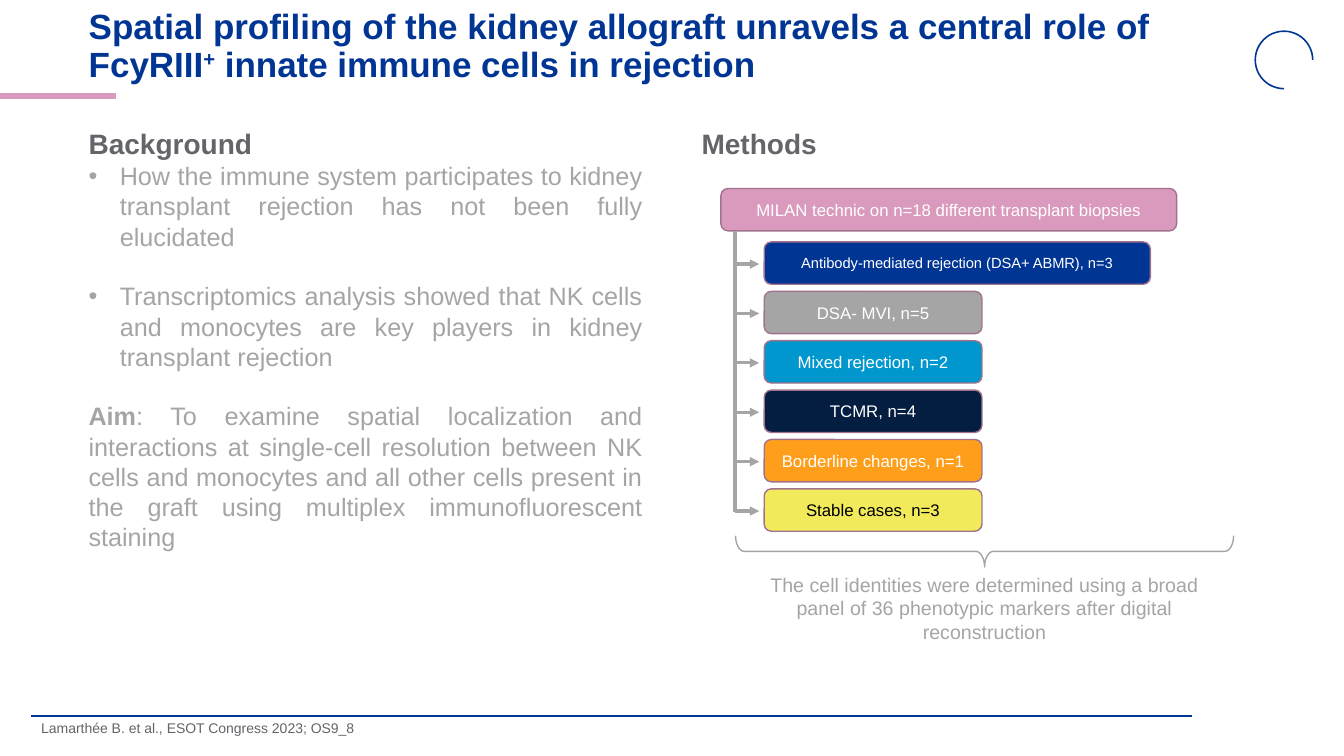
from lxml import etree
from pptx import Presentation
from pptx.dml.color import RGBColor
from pptx.enum.shapes import MSO_CONNECTOR, MSO_SHAPE
from pptx.enum.text import MSO_ANCHOR, PP_ALIGN
from pptx.oxml.ns import qn
from pptx.util import Pt

EMU_PER_PX = 9144  # 100 px to the inch
TITLE_ONLY = 5
STRAIGHT = MSO_CONNECTOR.STRAIGHT
BOX, BRACE, ARC = (MSO_SHAPE.FLOWCHART_ALTERNATE_PROCESS,
                   MSO_SHAPE.RIGHT_BRACE, MSO_SHAPE.ARC)
TOP, MIDDLE = MSO_ANCHOR.TOP, MSO_ANCHOR.MIDDLE
LEFT, CENTER, JUSTIFY = PP_ALIGN.LEFT, PP_ALIGN.CENTER, PP_ALIGN.JUSTIFY

WHITE = RGBColor(0xFF, 0xFF, 0xFF)
BLACK = RGBColor(0x00, 0x00, 0x00)
BLUE = RGBColor(0x00, 0x35, 0x94)
PINK = RGBColor(0xDA, 0x9A, 0xBD)
MAUVE = RGBColor(0xA1, 0x72, 0x8C)
DARK_GREY = RGBColor(0x63, 0x65, 0x69)
GREY = RGBColor(0xA5, 0xA5, 0xA5)
CYAN = RGBColor(0x00, 0x97, 0xCE)
NAVY = RGBColor(0x04, 0x1E, 0x42)
ORANGE = RGBColor(0xFF, 0x9E, 0x1B)
YELLOW = RGBColor(0xF1, 0xEB, 0x5B)

HEADING = {"size": Pt(20), "bold": True}
BODY = {"size": Pt(18), "bold": False}
BLANK_LINE = Pt(21)
BULLET_INDENT = 31

# Diagnosis groups: label, fill, text colour, width, text size
GROUPS = [
    ("Antibody-mediated rejection (DSA+ ABMR), n=3", BLUE, WHITE, 383, 10.5),
    ("DSA- MVI, n=5", GREY, WHITE, 216, 12),
    ("Mixed rejection, n=2", CYAN, WHITE, 216, 12),
    ("TCMR, n=4", NAVY, WHITE, 216, 12),
    ("Borderline changes, n=1", ORANGE, WHITE, 216, 12),
    ("Stable cases, n=3", YELLOW, BLACK, 216, 12),
]
GROUP_LEFT, GROUP_TOP, GROUP_PITCH, BOX_HEIGHT = 758, 240, 49, 42
TRUNK_X, TRUNK_TOP, ARROW_TIP = 729, 229, 753


def px(*lengths):
    return [length * EMU_PER_PX for length in lengths]


def set_attributes(target, values):
    for name, value in values.items():
        setattr(target, name, value)


def add_run(paragraph, text, color, values):
    run = paragraph.add_run()
    run.text = text
    set_attributes(run.font, {"name": "Arial", **values})
    run.font.color.rgb = color
    return run


def add_paragraph(frame, runs, first=False, **values):
    """Add a paragraph of (text, colour, font values) runs."""
    paragraph = frame.paragraphs[0] if first else frame.add_paragraph()
    set_attributes(paragraph, values)
    for run in runs:
        add_run(paragraph, *run)
    return paragraph


def add_bullet(paragraph):
    properties = paragraph._p.get_or_add_pPr()
    indent = BULLET_INDENT * EMU_PER_PX
    properties.set("marL", str(indent))
    properties.set("indent", str(-indent))
    etree.SubElement(properties, qn("a:buFont")).set("typeface", "Arial")
    etree.SubElement(properties, qn("a:buChar")).set("char", "•")


def add_text_box(slide, box, runs, **values):
    frame = slide.shapes.add_textbox(*px(*box)).text_frame
    set_attributes(frame, {"word_wrap": True, "vertical_anchor": TOP})
    add_paragraph(frame, runs, first=True, **values)
    return frame


def add_line(slide, start, end, color, width, arrow=False):
    line = slide.shapes.add_connector(STRAIGHT, *px(*start, *end))
    line.line.color.rgb = color
    line.line.width = Pt(width)
    if arrow:
        outline = line.line._get_or_add_ln()
        etree.SubElement(outline, qn("a:tailEnd")).set("type", "triangle")
    etree.SubElement(line._element.spPr, qn("a:effectLst"))


def add_outline(slide, preset, box, color, width, adjustments):
    shape = slide.shapes.add_shape(preset, *px(*box))
    shape.shadow.inherit = False
    shape.fill.background()
    shape.line.color.rgb = color
    shape.line.width = Pt(width)
    for index, value in enumerate(adjustments):
        shape.adjustments[index] = value
    return shape


def add_box(slide, box, text, fill, color, size):
    shape = add_outline(slide, BOX, box, MAUVE, 1, [])
    shape.fill.solid()
    shape.fill.fore_color.rgb = fill
    set_attributes(shape.text_frame, {"word_wrap": True, "vertical_anchor": MIDDLE})
    add_paragraph(shape.text_frame, [(text, color, {"size": Pt(size)})],
                  first=True, alignment=CENTER)


def add_title(slide):
    title = slide.shapes.title
    left, top, width, height = px(78, 10, 1150, 73)
    set_attributes(title, {"left": left, "top": top, "width": width, "height": height})
    set_attributes(title.text_frame, {"word_wrap": True, "vertical_anchor": MIDDLE})
    style = {"size": Pt(25), "bold": True}
    paragraph = add_paragraph(title.text_frame, [
        ("Spatial profiling of the kidney allograft unravels a central role of FcyRIII",
         BLUE, style)], first=True, alignment=LEFT, line_spacing=0.9)
    plus = add_run(paragraph, "+", BLUE, style)
    plus.font._element.set("baseline", "30000")
    add_run(paragraph, " innate immune cells in rejection", BLUE, style)


def add_background(slide):
    frame = add_text_box(slide, (78, 121, 569, 468),
                         [("Background", DARK_GREY, HEADING)])
    findings = [
        "How the immune system participates to kidney transplant rejection "
        "has not been fully elucidated",
        "Transcriptomics analysis showed that NK cells and monocytes are key "
        "players in kidney transplant rejection",
    ]
    for index, finding in enumerate(findings):
        paragraph = add_paragraph(frame, [(finding, GREY, BODY)], alignment=JUSTIFY,
                                  space_before=BLANK_LINE if index else Pt(0))
        add_bullet(paragraph)
    add_paragraph(frame, [
        ("Aim", GREY, {**BODY, "bold": True}),
        (": To examine spatial localization and interactions at single-cell "
         "resolution between NK cells and monocytes and all other cells present "
         "in the graft using multiplex immunofluorescent staining", GREY, BODY),
    ], alignment=JUSTIFY, space_before=BLANK_LINE)


def add_methods(slide):
    add_text_box(slide, (686, 121, 170, 44), [("Methods", DARK_GREY, HEADING)])
    add_box(slide, (715, 187, 452, BOX_HEIGHT),
            "MILAN technic on n=18 different transplant biopsies", PINK, WHITE, 12)

    # One branch per diagnosis group
    for index, (label, fill, color, width, size) in enumerate(GROUPS):
        top = GROUP_TOP + index * GROUP_PITCH
        middle = top + BOX_HEIGHT // 2 + 1
        add_box(slide, (GROUP_LEFT, top, width, BOX_HEIGHT), label, fill, color, size)
        add_line(slide, (TRUNK_X, middle), (ARROW_TIP, middle), GREY, 2.25, arrow=True)
    add_line(slide, (TRUNK_X, TRUNK_TOP), (TRUNK_X, middle + 1), GREY, 2.25)

    # Brace and its caption
    brace = add_outline(slide, BRACE, (961, 300, 31, 494), GREY, 1, [0.28, 0.5])
    brace.rotation = 90
    add_text_box(slide, (730, 563, 493, 81), [
        ("The cell identities were determined using a broad panel of 36 phenotypic "
         "markers after digital reconstruction", GREY, {"size": Pt(14)})],
        alignment=CENTER)


def main():
    presentation = Presentation()
    presentation.slide_width, presentation.slide_height = px(1333, 750)
    slide = presentation.slides.add_slide(presentation.slide_layouts[TITLE_ONLY])

    # Page decoration
    add_line(slide, (0, 95), (115, 95), PINK, 4.5)
    add_line(slide, (31, 710), (1182, 710), BLUE, 1.5)
    add_outline(slide, ARC, (1245, 31, 57, 57), BLUE, 1.13, [54, 0])

    # Content
    add_title(slide)
    add_background(slide)
    add_methods(slide)
    add_text_box(slide, (31, 711, 784, 34), [
        ("Lamarthée B. et al., ESOT Congress 2023; OS9_8", DARK_GREY,
         {"size": Pt(10)})], line_spacing=0.9)
    presentation.save("out.pptx")


if __name__ == "__main__":
    main()
